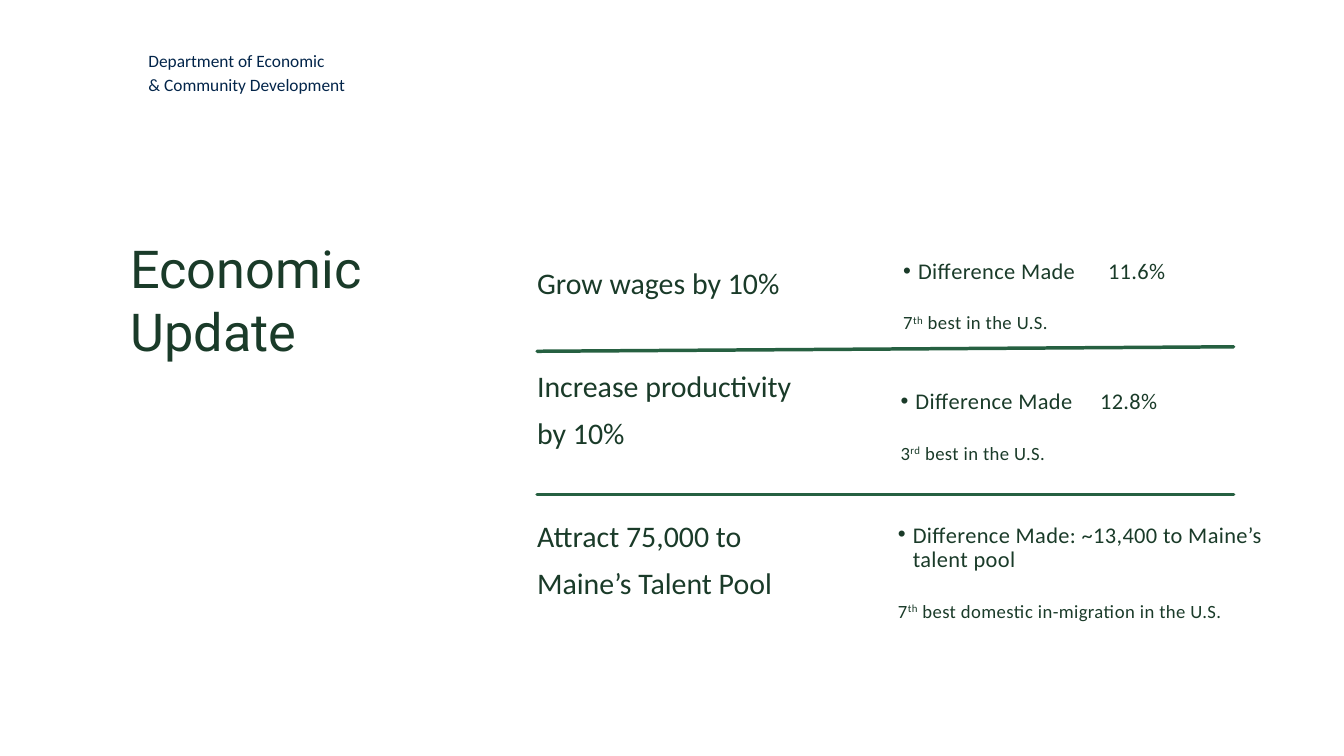
from lxml import etree
from pptx import Presentation
from pptx.dml.color import RGBColor
from pptx.enum import shapes, text
from pptx.oxml import ns
from pptx.util import Cm, Pt

GREEN = RGBColor(0x1A, 0x3B, 0x29)
RULE = RGBColor(0x26, 0x60, 0x41)
NAVY = RGBColor(0x03, 0x25, 0x4A)

TITLE = ["Economic", "Update"]
DEPT = ["Department of Economic", "& Community Development"]

# Boxes are left, top, width, height in cm
GOALS = [
    ("Grow wages by 10%", (20.3, 9.6, 10.2, 3.4)),
    ("Increase productivity by 10%", (20.3, 13.49, 10.34, 5.16)),
    ("Attract 75,000 to Maine’s Talent Pool", (20.3, 19.15, 10.34, 5.16)),
]
# Result, tab stop in cm, rank, ordinal ending, rest of the ranking, box
RESULTS = [
    ("Difference Made\t11.6%", 8.3, "7", "th", " best in the U.S.",
     (33.58, 9.8, 13.13, 2.8)),
    ("Difference Made\t12.8%", 8.1, "3", "rd", " best in the U.S.",
     (33.48, 14.73, 13.74, 2.9)),
    ("Difference Made: ~13,400 to Maine’s talent pool", None, "7", "th",
     " best domestic in-migration in the U.S.", (33.38, 19.76, 15.32, 3.76)),
]
RULES = [(13.28, 13.11), (18.69, 18.69)]  # height at left and right end
LEFT, RIGHT = 20.3, 46.63
STEP, HANG = 0.56, 26.6  # list indent in cm, line pitch in points


def place(shape, box):
    """Move a shape to its box and clear its text frame settings."""
    shape.left, shape.top, shape.width, shape.height = map(Cm, box)
    frame = shape.text_frame
    frame.margin_left = frame.margin_right = 0
    frame.margin_top = frame.margin_bottom = 0
    frame.word_wrap = True
    frame.auto_size = text.MSO_AUTO_SIZE.NONE
    frame.vertical_anchor = text.MSO_ANCHOR.TOP
    return frame


def style(para, size, pitch, color=GREEN, name="Calibri", before=0):
    para.alignment = text.PP_ALIGN.LEFT
    para.line_spacing = Pt(pitch)
    para.space_before = Pt(before)
    font = para.font
    font.size, font.name, font.bold = Pt(size), name, False
    font.color.rgb = color
    return font


def write(frame, lines, *look):
    for i, line in enumerate(lines):
        para = frame.add_paragraph() if i else frame.paragraphs[0]
        para.text = line
        style(para, *look)


def indent(para, left, first, mark=None, tab=None):
    props = para._p.get_or_add_pPr()
    props.set("marL", str(Cm(left)))
    props.set("indent", str(Cm(first)))
    if mark:
        etree.SubElement(props, ns.qn("a:buChar"), char=mark)
    else:
        etree.SubElement(props, ns.qn("a:buNone"))
    if tab:
        stops = etree.SubElement(props, ns.qn("a:tabLst"))
        etree.SubElement(stops, ns.qn("a:tab"), pos=str(Cm(tab)), algn="l")


def report(frame, fact, tab, rank, end, rest):
    """Write a bulleted result with its ranking below."""
    top = frame.paragraphs[0]
    top.text = fact
    indent(top, 2 * STEP, -STEP, "•", tab)
    low = frame.add_paragraph()
    for part in (rank, end, rest):
        run = low.add_run()
        run.text = part
        if part == end:
            run.font._element.set("baseline", "30000")
    indent(low, STEP, 0)
    for para, size, before in ((top, 24, 0), (low, 20, HANG)):
        font = style(para, size, HANG, before=before)
        font._element.set("spc", "40")


def draw(slide, start, end):
    line = slide.shapes.add_connector(
        shapes.MSO_CONNECTOR.STRAIGHT, Cm(LEFT), Cm(start), Cm(RIGHT), Cm(end))
    line.line.color.rgb = RULE
    line.line.width = Pt(3.75)
    line.line._ln.set("cap", "rnd")
    etree.SubElement(line._element.spPr, ns.qn("a:effectLst"))


def main():
    deck = Presentation()
    deck.slide_width, deck.slide_height = Cm(50.8), Cm(28.58)
    slide = deck.slides.add_slide(deck.slide_layouts[4])
    holders = list(slide.placeholders)

    frame = place(slide.shapes.title, (4.93, 8.94, 13.79, 4.78))
    write(frame, TITLE, 56, 67.2, GREEN, "Roboto")
    for holder, (*words, box) in zip(holders[1:], RESULTS):
        report(place(holder, box), *words)
    spare = holders[-1]._element
    spare.getparent().remove(spare)

    for goal, box in GOALS:
        label = slide.shapes.add_textbox(0, 0, 0, 0)
        write(place(label, box), [goal], 32, 50.4)
    for start, end in RULES:
        draw(slide, start, end)
    label = slide.shapes.add_textbox(0, 0, 0, 0)
    write(place(label, (5.61, 1.75, 8.86, 1.78)), DEPT, 18.6, 26.1, NAVY)

    deck.save("out.pptx")


if __name__ == "__main__":
    main()
